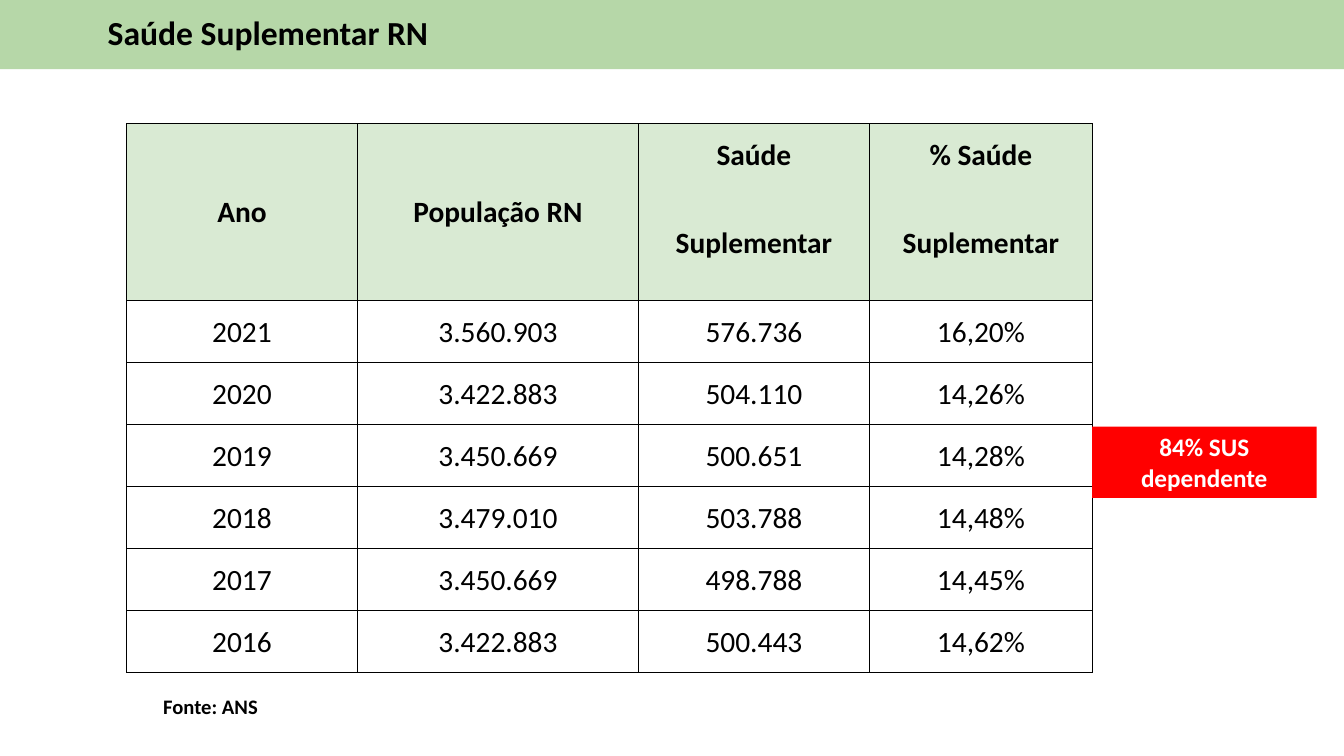
from dataclasses import dataclass
from typing import Any

from lxml import etree
from pptx import Presentation
from pptx import util as u
from pptx.dml import color
from pptx.enum import shapes, text
from pptx.oxml import ns

Pt = u.Pt
COLOURS = {
    "band": "B6D7A8",
    "header": "D9EAD3",
    "alert": "FF0000",
    "ink": "000000",
    "paper": "FFFFFF",
}
HEADER_ROWS = [
    ["Ano", "População RN", "Saúde", "% Saúde"],
    ["", "", "Suplementar", "Suplementar"],
]
YEARS = [
    ["2021", "3.560.903", "576.736", "16,20%"],
    ["2020", "3.422.883", "504.110", "14,26%"],
    ["2019", "3.450.669", "500.651", "14,28%"],
    ["2018", "3.479.010", "503.788", "14,48%"],
    ["2017", "3.450.669", "498.788", "14,45%"],
    ["2016", "3.422.883", "500.443", "14,62%"],
]
COLUMN_WIDTHS = [165, 200.7, 165, 159.3]
ROW_HEIGHTS = [44.3, 82.1] + [44.3] * len(YEARS)
MERGED_COLUMNS = 2
BORDER = 0.5


@dataclass
class Box:
    left: float
    top: float
    width: float
    height: float

    def lengths(self) -> list[u.Length]:
        return [Pt(n) for n in (self.left, self.top, self.width, self.height)]


@dataclass
class Label:
    wording: str
    size: float
    colour: str = "ink"
    bold: bool = True
    align: Any = text.PP_ALIGN.CENTER
    space_before: float = 0


def rgb(name: str) -> color.RGBColor:
    return color.RGBColor.from_string(COLOURS[name])


def apply(target: Any, values: dict[str, Any]) -> None:
    for name, value in values.items():
        setattr(target, name, value)


def write(frame: Any, label: Label) -> None:
    paragraph = frame.paragraphs[0]
    apply(paragraph, {"alignment": label.align, "space_before": Pt(label.space_before)})
    run = paragraph.add_run()
    run.text = label.wording
    apply(run.font, {"name": "Calibri", "size": Pt(label.size), "bold": label.bold})
    run.font.color.rgb = rgb(label.colour)


def write_caption(holder: Any, box: Box, label: Label) -> None:
    apply(holder, dict(zip(("left", "top", "width", "height"), box.lengths())))
    margins = {f"margin_{side}": Pt(9.2) for side in ("left", "top", "right", "bottom")}
    apply(holder.text_frame, margins | {
        "word_wrap": True,
        "auto_size": text.MSO_AUTO_SIZE.SHAPE_TO_FIT_TEXT,
        "vertical_anchor": text.MSO_ANCHOR.TOP,
    })
    write(holder.text_frame, label)


def add_block(slide: Any, box: Box, fill: str) -> Any:
    block = slide.shapes.add_shape(shapes.MSO_SHAPE.RECTANGLE, *box.lengths())
    block.shadow.inherit = False
    block.fill.solid()
    block.fill.fore_color.rgb = rgb(fill)
    block.line.fill.background()
    return block


def set_borders(cell: Any, hidden: str) -> None:
    """Rule all four sides of a cell, except the hidden one (L, R, T or B)."""
    properties = cell._tc.get_or_add_tcPr()
    for side in "LRTB":
        line = etree.SubElement(properties, ns.qn(f"a:ln{side}"), w=str(Pt(BORDER)))
        if side == hidden:
            etree.SubElement(line, ns.qn("a:noFill"))
        else:
            fill = etree.SubElement(line, ns.qn("a:solidFill"))
            etree.SubElement(fill, ns.qn("a:srgbClr"), val=COLOURS["ink"])


def add_coverage_table(slide: Any, box: Box) -> None:
    rows = HEADER_ROWS + YEARS
    coverage = slide.shapes.add_table(len(rows), len(COLUMN_WIDTHS), *box.lengths()).table
    apply(coverage, {"first_row": False, "horz_banding": False})
    for column, width in zip(coverage.columns, COLUMN_WIDTHS):
        column.width = Pt(width)
    for row, height in zip(coverage.rows, ROW_HEIGHTS):
        row.height = Pt(height)

    for r, values in enumerate(rows):
        is_header = r < len(HEADER_ROWS)
        for c, value in enumerate(values):
            cell = coverage.cell(r, c)
            apply(cell, {
                "margin_left": Pt(0.7),
                "margin_right": Pt(0.7),
                "margin_top": Pt(0.7),
                "margin_bottom": Pt(0),
                "vertical_anchor": text.MSO_ANCHOR.MIDDLE,
            })
            split_heading = is_header and c >= MERGED_COLUMNS
            set_borders(cell, "BT"[r] if split_heading else "")
            if is_header:
                cell.fill.solid()
                cell.fill.fore_color.rgb = rgb("header")
            else:
                cell.fill.background()
            if value:
                write(cell.text_frame, Label(value, 21, bold=is_header))

    for c in range(MERGED_COLUMNS):
        coverage.cell(0, c).merge(coverage.cell(1, c))


def main() -> None:
    deck = Presentation()
    apply(deck, {"slide_width": Pt(960), "slide_height": Pt(540)})
    slide = deck.slides.add_slide(deck.slide_layouts[5])
    title = slide.shapes.title

    band = add_block(slide, Box(0, 0, 960, 49.5), "band")
    title._element.addprevious(band._element)
    justified = text.PP_ALIGN.JUSTIFY
    write_caption(title, Box(67.7, -0.7, 745, 57),
                  Label("Saúde Suplementar RN", 24, align=justified, space_before=8))

    source_box = Box(107.3, 486.7, 314.6, 45.4)
    source = slide.shapes.add_textbox(*source_box.lengths())
    write_caption(source, source_box,
                  Label("Fonte: ANS", 14.7, align=justified, space_before=8))

    add_coverage_table(slide, Box(90.4, 88.3, sum(COLUMN_WIDTHS), sum(ROW_HEIGHTS)))

    dependence = add_block(slide, Box(780, 304.8, 160.4, 50.9), "alert")
    apply(dependence.text_frame, {
        "word_wrap": True,
        "auto_size": text.MSO_AUTO_SIZE.SHAPE_TO_FIT_TEXT,
        "vertical_anchor": text.MSO_ANCHOR.TOP,
    })
    write(dependence.text_frame, Label("84% SUS dependente", 18, "paper"))

    deck.save("out.pptx")


if __name__ == "__main__":
    main()
